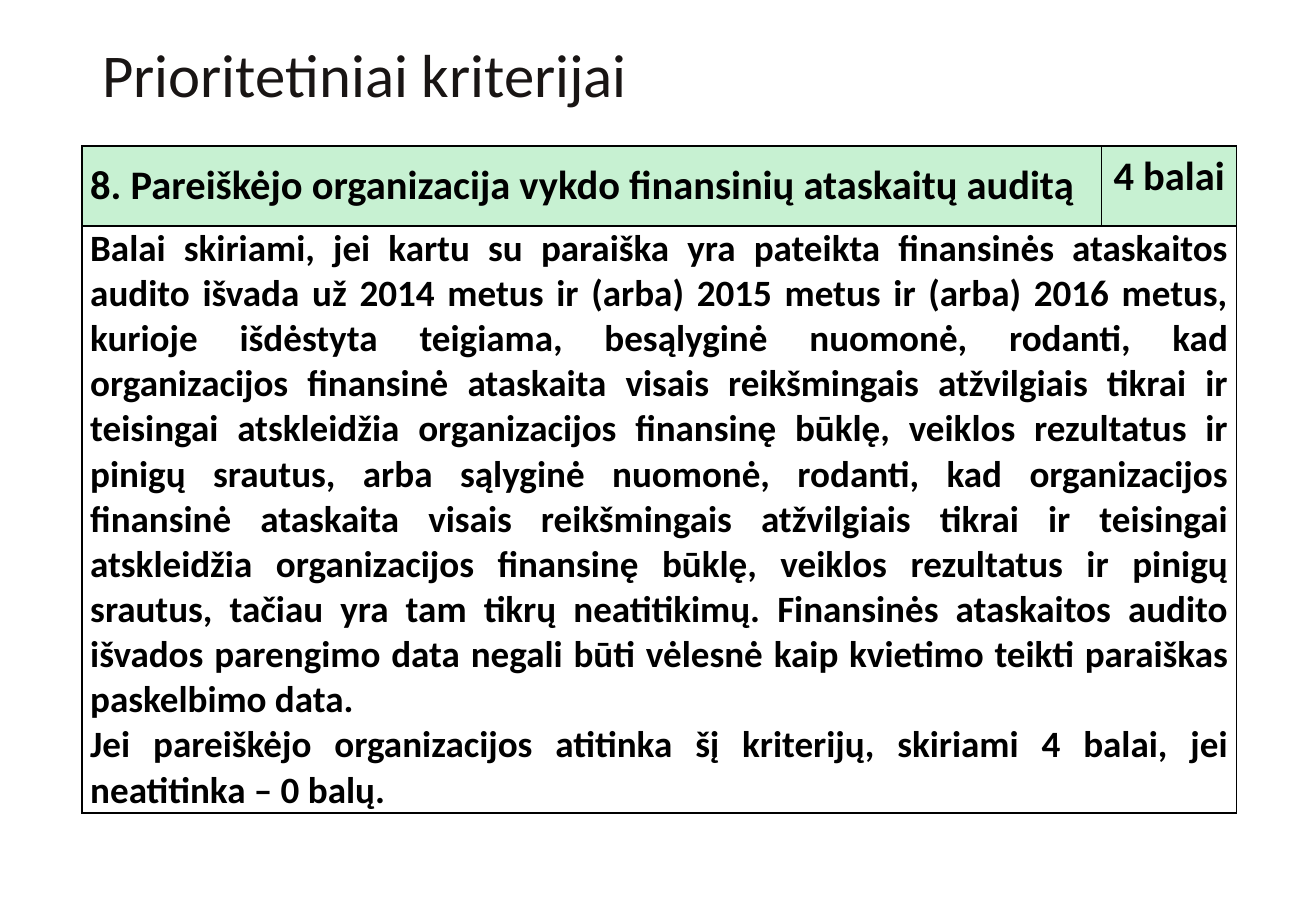
from lxml.etree import SubElement
from pptx import Presentation
from pptx.dml.color import RGBColor
from pptx.enum.text import MSO_ANCHOR, PP_ALIGN
from pptx.oxml import parse_xml
from pptx.oxml.ns import nsdecls, qn
from pptx.util import Pt

FONT = "Calibri"
BLACK = "000000"
HEADER_GREEN = "C7F1D2"
TITLE = "Prioritetiniai kriterijai"
CRITERION = "8. Pareiškėjo organizacija vykdo finansinių ataskaitų auditą"
POINTS = "4 balai"
EXPLANATION = [
    "Balai skiriami, jei kartu su paraiška yra pateikta finansinės ataskaitos audito išvada "
    "už 2014 metus ir (arba) 2015 metus ir (arba) 2016 metus, kurioje išdėstyta teigiama, "
    "besąlyginė nuomonė, rodanti, kad organizacijos finansinė ataskaita visais reikšmingais "
    "atžvilgiais tikrai ir teisingai atskleidžia organizacijos finansinę būklę, veiklos "
    "rezultatus ir pinigų srautus, arba sąlyginė nuomonė, rodanti, kad organizacijos finansinė "
    "ataskaita visais reikšmingais atžvilgiais tikrai ir teisingai atskleidžia organizacijos "
    "finansinę būklę, veiklos rezultatus ir pinigų srautus, tačiau yra tam tikrų neatitikimų. "
    "Finansinės ataskaitos audito išvados parengimo data negali būti vėlesnė kaip kvietimo "
    "teikti paraiškas paskelbimo data.",
    "Jei pareiškėjo organizacijos atitinka šį kriterijų, skiriami 4 balai, "
    "jei neatitinka – 0 balų.",
]


def color(value):
    return RGBColor.from_string(value)


def format_paragraph(paragraph, size, ink, bold, align, spacing=None):
    paragraph.alignment = align
    paragraph.line_spacing = spacing
    font = paragraph.font
    font.name, font.size, font.bold = FONT, Pt(size), bold
    font.color.rgb = color(ink)


def add_title(slide, left, top, width, height):
    title = slide.shapes.title
    title.left, title.top, title.width, title.height = Pt(left), Pt(top), Pt(width), Pt(height)
    frame = title.text_frame
    frame.text = TITLE
    frame.word_wrap = True
    frame.vertical_anchor = MSO_ANCHOR.MIDDLE
    format_paragraph(frame.paragraphs[0], 36, "191514", False, PP_ALIGN.LEFT, 0.9)


def add_borders(cell):
    properties = cell._tc.get_or_add_tcPr()
    for position, side in enumerate(("lnL", "lnR", "lnT", "lnB")):
        line = parse_xml(f'<a:{side} {nsdecls("a")} w="{Pt(1)}"/>')
        fill = SubElement(line, qn("a:solidFill"))
        SubElement(fill, qn("a:srgbClr"), val=BLACK)
        properties.insert(position, line)


def fill_cell(cell, texts, size, align, anchor, margin, spacing=None):
    cell.margin_left = cell.margin_right = Pt(5)
    cell.margin_top = cell.margin_bottom = Pt(margin)
    cell.vertical_anchor = anchor
    cell.text = "\n".join(texts)
    for paragraph in cell.text_frame.paragraphs:
        format_paragraph(paragraph, size, BLACK, True, align, spacing)


def add_criterion_table(slide, left, top, width, height):
    points_width, header_height = 80, 47.5
    table = slide.shapes.add_table(2, 2, Pt(left), Pt(top), Pt(width), Pt(height)).table
    table.first_row = table.horz_banding = False
    table.columns[0].width = Pt(width - points_width)
    table.columns[1].width = Pt(points_width)
    table.rows[0].height = Pt(header_height)
    table.rows[1].height = Pt(height - header_height)
    criterion, points = table.cell(0, 0), table.cell(0, 1)
    explanation = table.cell(1, 0)
    explanation.merge(table.cell(1, 1))
    fill_cell(criterion, [CRITERION], 24, PP_ALIGN.LEFT, MSO_ANCHOR.MIDDLE, 5.75)
    fill_cell(points, [POINTS], 24, PP_ALIGN.CENTER, MSO_ANCHOR.MIDDLE, 2.9, Pt(18))
    fill_cell(explanation, EXPLANATION, 22, PP_ALIGN.JUSTIFY, MSO_ANCHOR.TOP, 0)
    for cell in (criterion, points):
        cell.fill.solid()
        cell.fill.fore_color.rgb = color(HEADER_GREEN)
    for cell in (explanation, table.cell(1, 1)):
        cell.fill.background()
    for cell in table.iter_cells():
        add_borders(cell)


def main():
    deck = Presentation()
    deck.slide_width, deck.slide_height = Pt(780), Pt(540)
    slide = deck.slides.add_slide(deck.slide_layouts[5])
    add_title(slide, 53.5, 25, 672.5, 42.5)
    add_criterion_table(slide, 48.5, 86.5, 684.5, 293)
    deck.save("out.pptx")


if __name__ == "__main__":
    main()
